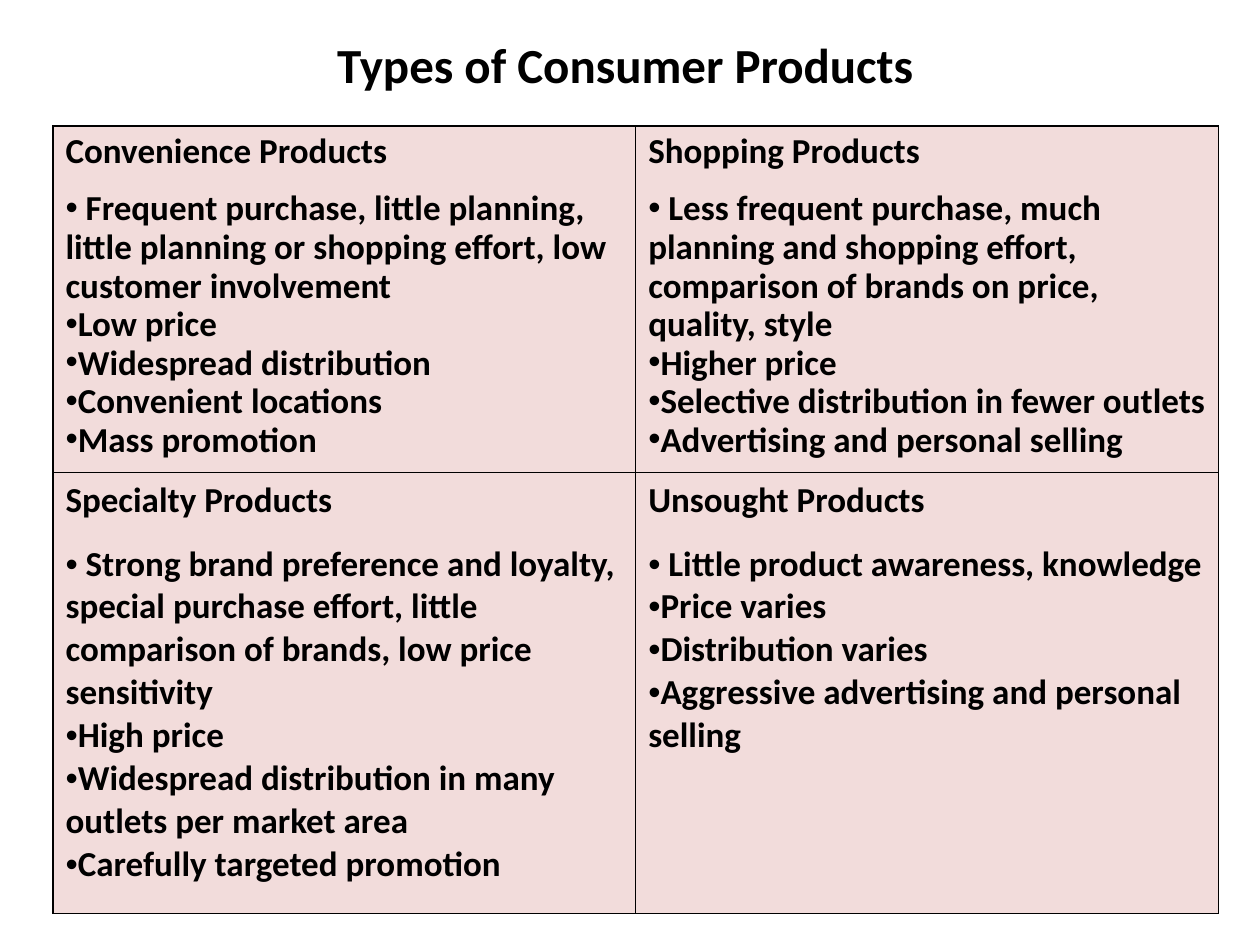
from lxml.etree import SubElement as Sub
from pptx import Presentation
from pptx.dml.color import RGBColor as RGB
from pptx.enum.text import MSO_ANCHOR as Anchor, PP_ALIGN as Align
from pptx.oxml.ns import qn
from pptx.util import Inches, Pt

BLACK = RGB(0x00, 0x00, 0x00)
PINK = RGB(0xF2, 0xDC, 0xDB)

# Each row: line spacing, gap below the heading, then (heading, bullets) per cell
ROWS = [
    (0.9, 11, [
        ("Convenience Products", [
            " Frequent purchase, little planning, little planning or shopping "
            "effort, low customer involvement",
            "Low price",
            "Widespread distribution",
            "Convenient locations",
            "Mass promotion"]),
        ("Shopping Products", [
            " Less frequent purchase, much planning and shopping effort, "
            "comparison of brands on price, quality, style",
            "Higher price",
            "Selective distribution in fewer outlets",
            "Advertising and personal selling"]),
    ]),
    (1.0, 12, [
        ("Specialty Products", [
            " Strong brand preference and loyalty, special purchase effort, "
            "little comparison of brands, low price sensitivity",
            "High price",
            "Widespread distribution in many outlets per market area",
            "Carefully targeted promotion"]),
        ("Unsought Products", [
            " Little product awareness, knowledge",
            "Price varies",
            "Distribution varies",
            "Aggressive advertising and personal selling"]),
    ]),
]


class Deck:
    face = "Calibri"

    def __init__(self, prs):
        self.slide = prs.slides.add_slide(prs.slide_layouts[5])

    def style(self, para, size):
        font = para.font
        font.name, font.size, font.bold = self.face, Pt(size), True
        font.color.rgb = BLACK

    def title(self, text, left, top, width, height):
        box = self.slide.shapes.title
        box.left, box.top = Inches(left), Inches(top)
        box.width, box.height = Inches(width), Inches(height)
        frame = box.text_frame
        frame.text = text
        frame.vertical_anchor = Anchor.MIDDLE
        para = frame.paragraphs[0]
        para.alignment = Align.CENTER
        self.style(para, 28)

    def bullet(self, para):
        props = para._p.get_or_add_pPr()
        props.set("marL", "0")
        props.set("indent", "0")
        Sub(props, qn("a:buFont"), typeface="Arial")
        Sub(props, qn("a:buChar"), char="•")

    def border(self, cell):
        props = cell._tc.get_or_add_tcPr()
        for side in ("lnL", "lnR", "lnT", "lnB"):
            line = Sub(props, qn("a:" + side), w=str(Pt(1)))
            fill = Sub(line, qn("a:solidFill"))
            Sub(fill, qn("a:srgbClr"), val=str(BLACK))

    def cell(self, cell, head, items, space, gap):
        self.border(cell)
        cell.fill.solid()
        cell.fill.fore_color.rgb = PINK
        frame = cell.text_frame
        for i, text in enumerate([head] + items):
            para = frame.add_paragraph() if i else frame.paragraphs[0]
            para.text = text
            para.line_spacing = space
            if i:
                self.bullet(para)
            else:
                para.space_after = Pt(gap)
            self.style(para, 20)

    def table(self, rows, left, top, width, heights):
        grid = self.slide.shapes.add_table(
            len(rows), len(rows[0][2]), Inches(left), Inches(top),
            Inches(width), Inches(sum(heights))).table
        grid.first_row = grid.horz_banding = False
        for r, (space, gap, cells) in enumerate(rows):
            grid.rows[r].height = Inches(heights[r])
            for c, (head, items) in enumerate(cells):
                self.cell(grid.cell(r, c), head, items, space, gap)


def main():
    prs = Presentation()
    prs.slide_width, prs.slide_height = Inches(10), Inches(7.5)
    deck = Deck(prs)
    # Product grid
    deck.table(ROWS, 0.42, 1, 9.25, (2.75, 3.5))
    # Heading
    deck.title("Types of Consumer Products ", 1.17, 0.17, 7.67, 0.67)
    prs.save("out.pptx")


if __name__ == "__main__":
    main()
